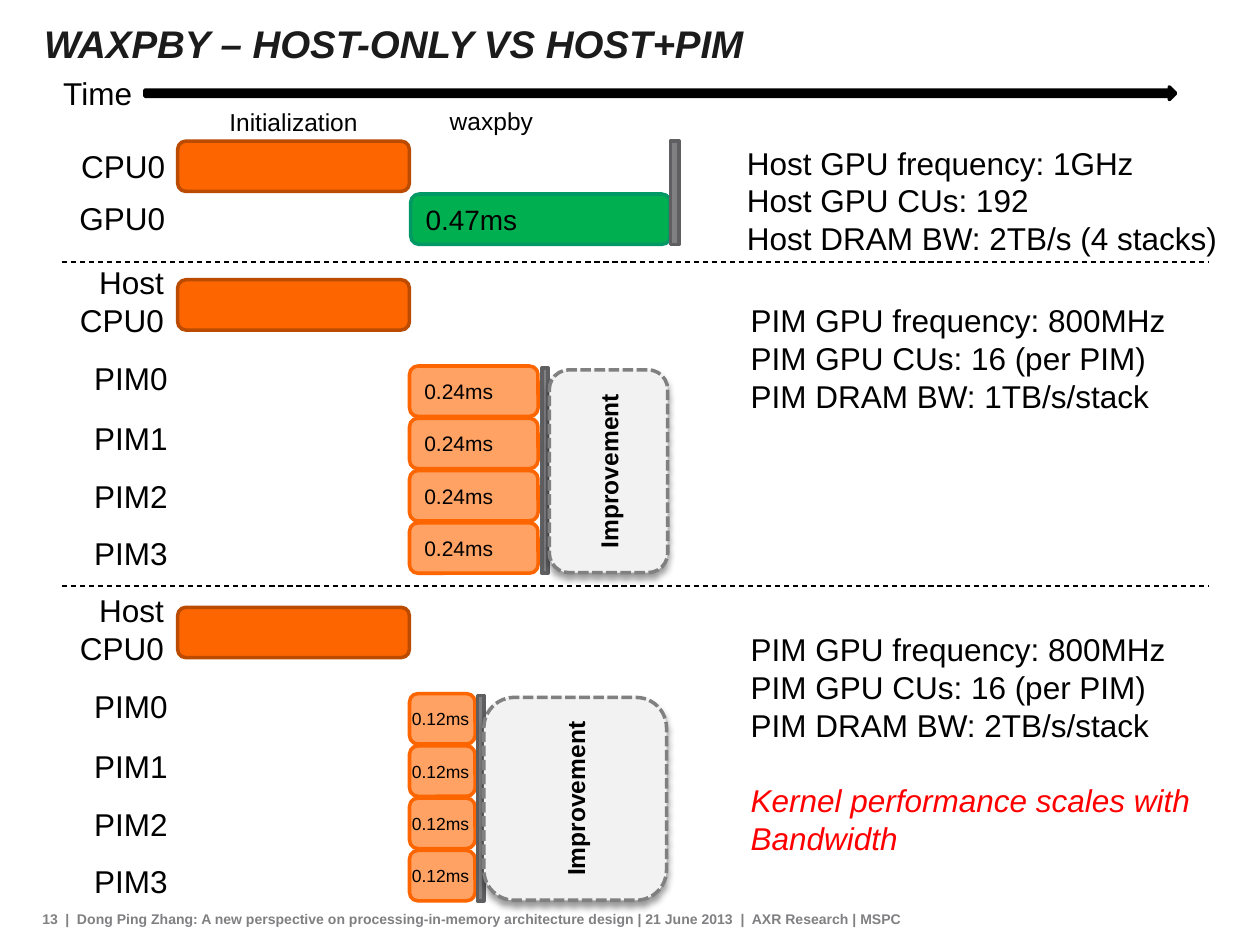
import pptx
import pptx.util
import pptx.dml.color
import pptx.enum.dml
import pptx.enum.shapes
import pptx.enum.text
import pptx.oxml
import pptx.oxml.ns

Pt = pptx.util.Pt
Inches = pptx.util.Inches
Align = pptx.enum.text.PP_ALIGN
Anchor = pptx.enum.text.MSO_ANCHOR
Dash = pptx.enum.dml.MSO_LINE
Form = pptx.enum.shapes.MSO_SHAPE

deck = pptx.Presentation()
deck.slide_width = Inches(10)
deck.slide_height = Inches(7.5)
col = deck.slide_width / 100
row = deck.slide_height / 75
slide = deck.slides.add_slide(deck.slide_layouts[5])
shapes = slide.shapes


def hue(code):
    return pptx.dml.color.RGBColor.from_string(code)


def put(kind, x, y, w, h, text="", size=18, tone="000000", side=Align.LEFT,
        fill=None, edge=None, face={}, pose={}):
    spot = [int(n) for n in (x * col, y * row, w * col, h * row)]
    if kind == "title":
        item = shapes.title
        item.left, item.top, item.width, item.height = spot
    elif kind == "text":
        item = shapes.add_textbox(*spot)
    else:
        item = shapes.add_shape(kind, *spot)
        item.shadow.inherit = False
        item.fill.solid()
        item.fill.fore_color.rgb = hue(fill)
        item.line.color.rgb = hue(edge)
        item.line.width = Pt(2)
    frame = item.text_frame
    if text:
        frame.text = text
    base = {"word_wrap": True, "auto_size": pptx.enum.text.MSO_AUTO_SIZE.NONE}
    for key, value in {**base, **pose}.items():
        setattr(frame, key, value)
    font = {"name": "Arial", "size": Pt(size), "bold": False, "italic": False}
    for para in frame.paragraphs:
        para.alignment = side
        for key, value in {**font, **face}.items():
            setattr(para.font, key, value)
        para.font.color.rgb = hue(tone)
    return item


mid = {"vertical_anchor": Anchor.MIDDLE}
flush = {"margin_left": 0, "margin_right": 0}
bare = {**flush, "margin_top": 0, "margin_bottom": 0, "vertical_anchor": Anchor.TOP}
wide = {**mid, "margin_left": Inches(0.25), "margin_right": Inches(0.25)}
bold = {"bold": True}
host = {"fill": "FC6500", "edge": "BA4B00"}
pim = {"fill": "FFA264", "edge": "FC6500"}
bar = {"fill": "807F82", "edge": "5F5E60"}
gain = {"fill": "F2F2F2", "edge": "808080"}
foot = {"size": 8, "tone": "807F82", "face": bold}

put("title", 3.5, 1.6, 93, 7, "WAXPBY – HOST-ONLY VS HOST+PIM", 22, "1B1B1B",
    face={"bold": True, "italic": True}, pose=bare)
put("text", 2.3, 71.8, 2.3, 2.3, "13", side=Align.RIGHT, pose={**mid, **flush}, **foot)
put("text", 4.2, 71.8, 69.2, 2.3,
    "|  Dong Ping Zhang: A new perspective on processing-in-memory architecture "
    "design | 21 June 2013  |  AXR Research | MSPC", pose=mid, **foot)

put(Form.RIGHT_ARROW, 11.5, 6.9, 81.8, 1, fill="000000", edge="000000")
for x, y, w, h, text, size in (
        (4, 5.4, 7.5, 4, "Time", 18),
        (14.1, 8, 18.4, 3.4, "Initialization", 14),
        (32.6, 7.9, 12.8, 3.4, "waxpby", 14)):
    put("text", x, y, w, h, text, size, side=Align.CENTER)

for y, text in ((11.2, "CPU0"), (15.3, "GPU0")):
    put("text", 5.1, y, 9, 4, text, side=Align.RIGHT)
put(Form.ROUNDED_RECTANGLE, 14.1, 11.2, 18.4, 4, **host)
put(Form.ROUNDED_RECTANGLE, 32.6, 15.4, 20.6, 4, "0.47ms", 16,
    fill="00B050", edge="009966", pose=mid)
put(Form.RECTANGLE, 53.2, 11.2, 0.7, 8.2, **bar)
put("text", 58.3, 10.9, 41.7, 10.1,
    "Host GPU frequency: 1GHz\nHost GPU CUs: 192\nHost DRAM BW: 2TB/s (4 stacks)")

glow = ('<a:effectLst %s><a:outerShdw blurRad="50800" dist="38100" dir="5400000">'
        '<a:srgbClr val="000000"><a:alpha val="40000"/></a:srgbClr>'
        '</a:outerShdw></a:effectLst>' % pptx.oxml.ns.nsdecls("a"))
plans = (
    (20.4, 10.2, "0.24ms", 12, mid, 43, 43.6, 9.4, 3, 1),
    (46.4, 5.2, "0.12ms", 10, {**mid, **flush}, 37.9, 38.4, 14.5, 3.1, 2))
for top, broad, span, size, pose, stop, left, room, drop, rate in plans:
    put("text", 5, top, 9, 7.1, "Host\nCPU0", side=Align.RIGHT)
    put(Form.ROUNDED_RECTANGLE, 14.1, top + 1.8, 18.4, 4, **host)
    for n, down in enumerate((7.6, 12.4, 17, 21.5)):
        put("text", 5.3, top + down, 9, 4, f"PIM{n}", side=Align.RIGHT)
        put(Form.ROUNDED_RECTANGLE, 32.5, top + 8.65 + 4.15 * n, broad, 4,
            span, size, pose=pose, **pim)
    put(Form.RECTANGLE, stop, top + 8.8, 0.5, 16.3, **bar)
    zone = put(Form.ROUNDED_RECTANGLE, left, top + 8.95, room, 16.1, "Improvement",
               14, side=Align.CENTER, face=bold, pose=wide, **gain)
    zone.line.dash_style = Dash.SQUARE_DOT
    zone.element.txBody.bodyPr.set("vert", "vert270")
    props = zone.element.spPr
    props.remove(props.find(pptx.oxml.ns.qn("a:effectLst")))
    props.append(pptx.oxml.parse_xml(glow))
    note = put("text", 58.6, top + drop, 39.7, 22.2 if rate == 2 else 16.2,
               "PIM GPU frequency: 800MHz\nPIM GPU CUs: 16 (per PIM)\n"
               f"PIM DRAM BW: {rate}TB/s/stack")

last = note.text_frame.add_paragraph()
last.text = "Kernel performance scales with Bandwidth"
last.space_before = Pt(21.5)
for key, value in {"name": "Arial", "size": Pt(18), "italic": True}.items():
    setattr(last.font, key, value)
last.font.color.rgb = hue("FF0000")

for y in (20.8, 46.5):
    rule = shapes.add_connector(pptx.enum.shapes.MSO_CONNECTOR.STRAIGHT,
                                int(4.9 * col), int(y * row), int(95.9 * col), int(y * row))
    rule.line.color.rgb = hue("000000")
    rule.line.width = Pt(0.75)
    rule.line.dash_style = Dash.DASH
    rule.element.spPr.append(pptx.oxml.parse_xml(
        "<a:effectLst %s/>" % pptx.oxml.ns.nsdecls("a")))

deck.save("out.pptx")
